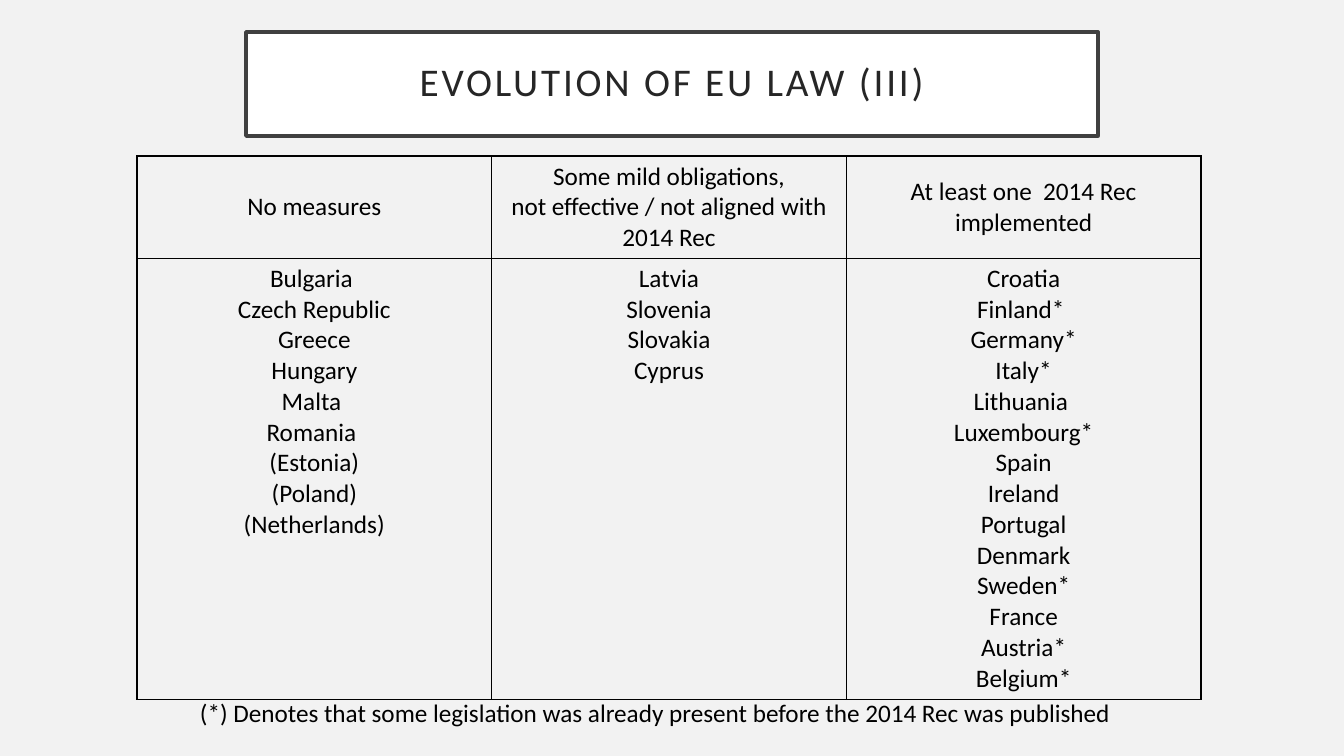
"""Build the slide on the evolution of EU law with its table of countries."""
import pptx
import pptx.dml.color
import pptx.enum.text
import pptx.oxml
import pptx.oxml.ns
import pptx.util

RGBColor = pptx.dml.color.RGBColor
PP_ALIGN = pptx.enum.text.PP_ALIGN
MSO_ANCHOR = pptx.enum.text.MSO_ANCHOR

TITLE = "EVOLUTION OF EU LAW (III)"
COLUMNS = [
    (["No measures"],
     ["Bulgaria ", "Czech Republic", "Greece", "Hungary", "Malta ", "Romania ",
      "(Estonia)", "(Poland)", "(Netherlands)"]),
    (["Some mild obligations,", "not effective / not aligned with 2014 Rec"],
     ["Latvia", "Slovenia", "Slovakia", "Cyprus"]),
    (["At least one  2014 Rec implemented"],
     ["Croatia", "Finland* ", "Germany*", "Italy*", "Lithuania ", "Luxembourg*", "Spain",
      "Ireland", "Portugal", "Denmark", "Sweden*", "France", "Austria*", "Belgium*"]),
]
FOOTNOTE = "(*) Denotes that some legislation was already present before the 2014 Rec was published"

BACKGROUND = RGBColor(0xF2, 0xF2, 0xF2)
WHITE = RGBColor(0xFF, 0xFF, 0xFF)
BLACK = RGBColor(0, 0, 0)
FRAME = RGBColor(0x40, 0x40, 0x40)
TITLE_INK = RGBColor(0x26, 0x26, 0x26)

SLIDE_SIZE = (1344, 756)
TITLE_BOX = (246, 32, 852, 104)
TABLE_BOX = (137, 156, 1064, 543)
HEADER_HEIGHT = 102
FOOTNOTE_BOX = (190, 692, 1060, 40)
TITLE_INSET = 20
FONT = "Calibri"


def px(n):
    return pptx.util.Emu(round(n * 914400 / 100.8))


def box(lengths):
    return [px(n) for n in lengths]


def write(tf, lines, size, color, align):
    for i, line in enumerate(lines):
        p = tf.paragraphs[0] if i == 0 else tf.add_paragraph()
        p.alignment = align
        r = p.add_run()
        r.text = line
        r.font.name, r.font.size = FONT, pptx.util.Pt(size)
        r.font.color.rgb = color


def add_borders(cell):
    pr = cell._tc.get_or_add_tcPr()
    for i, side in enumerate(("lnL", "lnR", "lnT", "lnB")):
        pr.insert(i, pptx.oxml.parse_xml(
            f'<a:{side} {pptx.oxml.ns.nsdecls("a")} w="12700">'
            f'<a:solidFill><a:srgbClr val="{BLACK}"/></a:solidFill></a:{side}>'))


def add_title(s):
    sp = s.shapes.title
    sp.left, sp.top, sp.width, sp.height = box(TITLE_BOX)
    sp.fill.solid()
    sp.fill.fore_color.rgb = WHITE
    sp.line.color.rgb = FRAME
    sp.line.width = pptx.util.Pt(2.5)
    tf = sp.text_frame
    formats = {"auto_size": pptx.enum.text.MSO_AUTO_SIZE.NONE,
               "vertical_anchor": MSO_ANCHOR.MIDDLE, "word_wrap": True}
    formats.update({f"margin_{side}": px(TITLE_INSET)
                    for side in ("left", "top", "right", "bottom")})
    for name, value in formats.items():
        setattr(tf, name, value)
    write(tf, [TITLE], 28, TITLE_INK, PP_ALIGN.CENTER)
    p = tf.paragraphs[0]
    p.line_spacing = 0.9
    p.runs[0].font._element.set("spc", "200")


def add_countries(s):
    table = s.shapes.add_table(2, len(COLUMNS), *box(TABLE_BOX)).table
    table.first_row = table.horz_banding = False
    table.rows[0].height = px(HEADER_HEIGHT)
    table.rows[1].height = px(TABLE_BOX[3] - HEADER_HEIGHT)
    for c, column in enumerate(COLUMNS):
        for r, lines in enumerate(column):
            cell = table.cell(r, c)
            cell.fill.background()
            cell.vertical_anchor = (MSO_ANCHOR.MIDDLE, MSO_ANCHOR.TOP)[r]
            write(cell.text_frame, lines, 18, BLACK, PP_ALIGN.CENTER)
            add_borders(cell)


def main():
    prs = pptx.Presentation()
    prs.slide_width, prs.slide_height = box(SLIDE_SIZE)
    s = prs.slides.add_slide(prs.slide_layouts[5])
    s.background.fill.solid()
    s.background.fill.fore_color.rgb = BACKGROUND
    add_title(s)
    add_countries(s)
    tf = s.shapes.add_textbox(*box(FOOTNOTE_BOX)).text_frame
    tf.word_wrap = True
    tf.auto_size = pptx.enum.text.MSO_AUTO_SIZE.SHAPE_TO_FIT_TEXT
    write(tf, [FOOTNOTE], 18, BLACK, PP_ALIGN.LEFT)
    prs.save("out.pptx")


if __name__ == "__main__":
    main()
